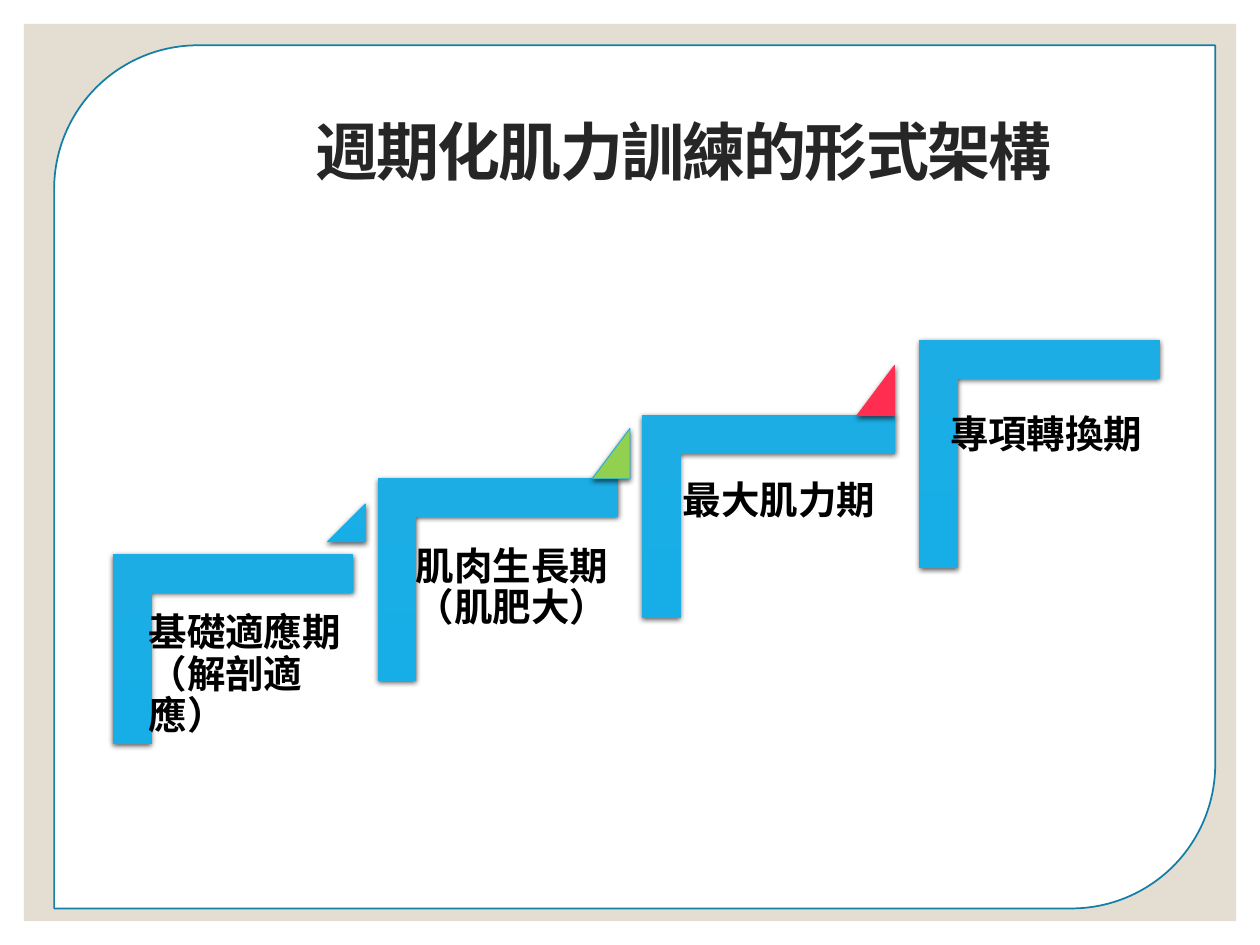
from lxml.etree import SubElement
from pptx import Presentation
from pptx.dml.color import RGBColor
from pptx.enum.shapes import MSO_SHAPE
from pptx.enum.text import MSO_ANCHOR, PP_ALIGN
from pptx.oxml.ns import qn
from pptx.util import Inches, Pt

FONT = "Noto Sans CJK SC"
HUE = {k: RGBColor.from_string(v) for k, v in {
    "sand": "E3DED1", "white": "FFFFFF", "edge": "147EA6", "blue": "1CADE4",
    "deep": "17AEE7", "green": "92D050", "red": "FF2E50",
    "title": "262626", "text": "000000"}.items()}

deck = Presentation()
deck.slide_width, deck.slide_height = Inches(10), Inches(7.5)
slide = deck.slides.add_slide(deck.slide_layouts[6])
shapes = slide.shapes
cell = deck.slide_width / 100  # grid of 100 columns by 75 rows


def label(words, box, size, hue, inset, lines):
    area = shapes.add_textbox(*[round(n * cell) for n in box])
    frame = area.text_frame
    frame.word_wrap = True
    frame.margin_left = frame.margin_right = round(inset * cell)
    frame.margin_top = frame.margin_bottom = round(inset * cell)
    para = frame.paragraphs[0]
    para.text = words
    para.line_spacing = lines
    font = para.font
    font.name, font.size, font.bold = FONT, Pt(size), True
    font.color.rgb = HUE[hue]
    props = para._p.pPr.find(qn("a:defRPr"))
    SubElement(props, qn("a:ea"), typeface=FONT)
    return frame, para, props


def solid(points, hue, edge):
    build = shapes.build_freeform(*points[0], scale=cell)
    build.add_line_segments(points[1:], close=True)
    part = build.convert_to_shape()
    if hue == "blue":
        part.fill.gradient()
        part.fill.gradient_angle = 270
        for stop, name in zip(part.fill.gradient_stops, ("blue", "deep")):
            stop.color.rgb = HUE[name]
    else:
        part.fill.solid()
        part.fill.fore_color.rgb = HUE[hue]
    part.line.color.rgb = HUE[edge]
    part.line.width = Pt(0.5)
    # Soft shadow straight below
    part.shadow.inherit = False
    effects = part._element.spPr.find(qn("a:effectLst"))
    shade = SubElement(effects, qn("a:outerShdw"), blurRad=str(Pt(3)),
                       dist=str(Pt(1)), dir="5400000", rotWithShape="0")
    tone = SubElement(shade, qn("a:srgbClr"), val="000000")
    SubElement(tone, qn("a:alpha"), val="63000")


# Sand backdrop and white page with two round corners
for kind, box, hue in ((MSO_SHAPE.RECTANGLE, (1.9, 1.9, 96.2, 71.2), "sand"),
                       (MSO_SHAPE.ROUND_2_DIAG_RECTANGLE,
                        (4.3, 3.6, 92.15, 68.5), "white")):
    page = shapes.add_shape(kind, *[round(n * cell) for n in box])
    page.shadow.inherit = False
    page.fill.solid()
    page.fill.fore_color.rgb = HUE[hue]
    page.line.fill.background()
page.line.color.rgb = HUE["edge"]
page.line.width = Pt(1)

# Title
frame, para, props = label("週期化肌力訓練的形式架構", (18.5, 8.5, 71.5, 7.9),
                           36, "title", 0.5, 0.83)
frame.vertical_anchor = MSO_ANCHOR.MIDDLE
para.alignment = PP_ALIGN.CENTER
props.set("spc", "-100")

# Stairs: words, top, foot, thickness, text top, marker (top, fill, edge)
stairs = [
    ("基礎適應期（解剖適應）", 44.1, 59.1, 2.5, 47.8, (39.7, "blue", "blue")),
    ("肌肉生長期（肌肥大）", 38.4, 54.4, 2.6, 42.5, (34.3, "green", "blue")),
    ("最大肌力期", 33.4, 48.9, 2.5, 37.3, (29.4, "red", "red")),
    ("專項轉換期", 26.7, 45, 3, 32.1, None),
]
for i, (words, top, foot, thick, row, mark) in enumerate(stairs):
    left = 9 + 21.2 * i
    right, inner, under = left + 19.2, left + thick, top + thick
    solid([(right, top), (right, under), (inner, under), (inner, foot),
           (left, foot), (left, top)], "blue", "blue")
    label(words, (left + 1.9, row, 17.3, 6), 22, "text", 0.9, 0.9)
    if mark:
        peak, hue, edge = mark
        start, end, base = left + 16.5, left + 19.8, peak + 3.3
        solid([(start, base), (end, peak), (end, base)], hue, edge)

deck.save("out.pptx")
